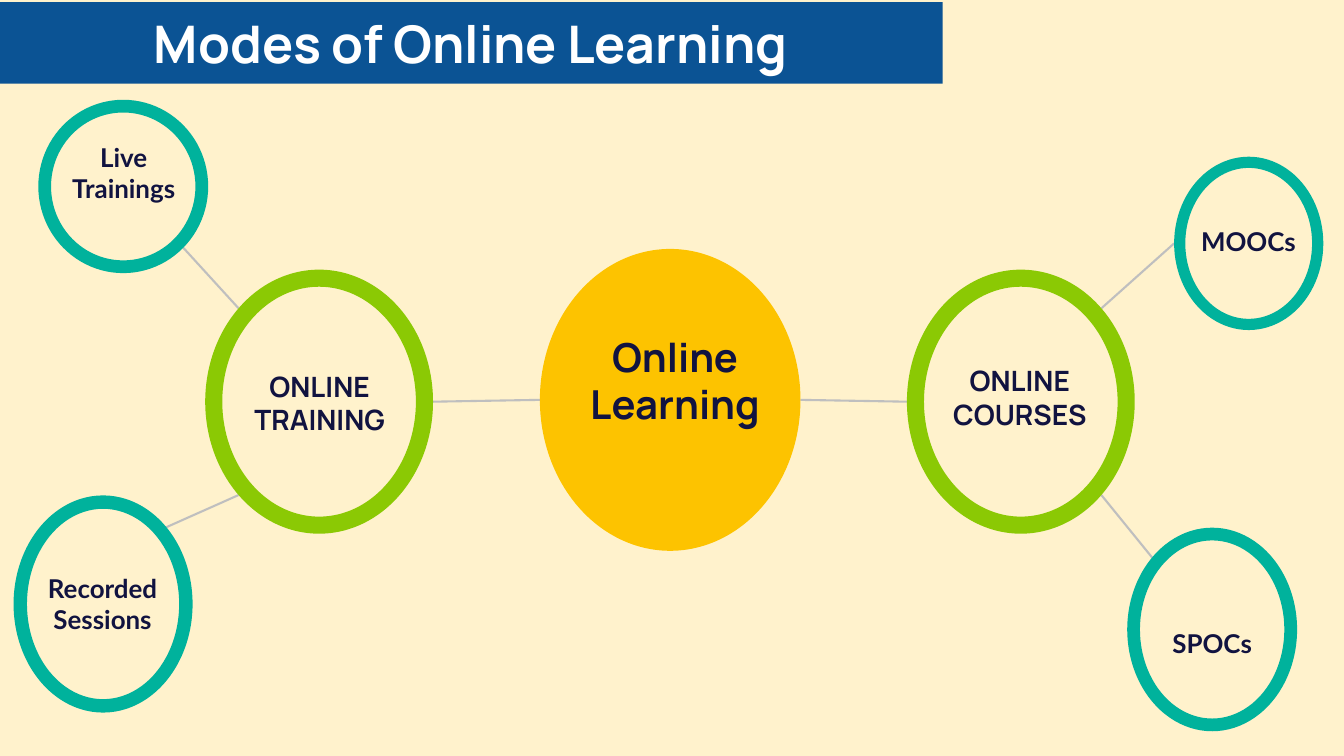
from math import cos, radians, sin

from lxml import etree
from pptx import Presentation
from pptx.dml.color import RGBColor
from pptx.enum.shapes import MSO_CONNECTOR, MSO_SHAPE
from pptx.enum.text import MSO_ANCHOR, MSO_AUTO_SIZE, PP_ALIGN
from pptx.oxml.ns import qn
from pptx.util import Inches, Pt

STRAIGHT = MSO_CONNECTOR.STRAIGHT
OVAL, RING = MSO_SHAPE.OVAL, MSO_SHAPE.DONUT
MIDDLE, CENTER = MSO_ANCHOR.MIDDLE, PP_ALIGN.CENTER
NO_AUTOFIT = MSO_AUTO_SIZE.NONE
TITLE_ONLY = 5

WIDTH, HEIGHT = Inches(26.66), Inches(15)
COLUMNS = ROWS = 100  # all places and sizes below are columns and rows

CREAM, NAVY, WHITE, BLUE = "FFF2CC", "111340", "FFFFFF", "0B5394"
YELLOW, GREEN, TEAL, GREY = "FDC300", "8BC904", "00B29C", "BFBFBF"

HUB = {"kind": OVAL, "color": YELLOW, "font": "Manrope", "size": 57}
BRANCH = {"kind": RING, "color": GREEN, "font": "Manrope", "size": 40}
LEAF = {"kind": RING, "color": TEAL, "font": "Lato", "size": 37}

# Label: (style, circle box, label box), boxes as left, top, width, height
CIRCLES = {
    "Online Learning": (HUB, (40.17, 32.93, 19.39, 39.93), (41.75, 43.53, 16.95, 13.47)),
    "ONLINE TRAINING": (BRANCH, (15.27, 35.67, 16.95, 34.93), (18.23, 48.47, 11.1, 9.67)),
    "Recorded Sessions": (LEAF, (1.01, 65.53, 13.32, 28.73), (1.31, 75.33, 12.64, 9)),
    "Live Trainings": (LEAF, (2.85, 13.2, 12.64, 22.93), (4.46, 18.33, 9.49, 9)),
    "ONLINE COURSES": (BRANCH, (67.48, 35.67, 16.95, 34.93), (70.33, 47.73, 11.1, 9.67)),
    "MOOCs": (LEAF, (87.36, 20.73, 11.1, 22.93), (88.97, 29.47, 7.84, 4.8)),
    "SPOCs": (LEAF, (83.87, 69.8, 12.64, 26.93), (86.27, 82.73, 7.84, 4.8)),
}

# Each end is a circle and the clockwise angle of the point on its rim
LINKS = [
    (("Live Trainings", 45), ("ONLINE TRAINING", 225)),
    (("Recorded Sessions", 315), ("ONLINE TRAINING", 135)),
    (("ONLINE COURSES", 45), ("SPOCs", 225)),
    (("MOOCs", 180), ("ONLINE COURSES", 315)),
    (("Online Learning", 0), ("ONLINE COURSES", 180)),
    (("ONLINE TRAINING", 0), ("Online Learning", 180)),
]


def rgb(color):
    return RGBColor.from_string(color)


def grid(x, y):
    return round(x * WIDTH / COLUMNS), round(y * HEIGHT / ROWS)


def rim_point(label, angle):
    left, top, width, height = CIRCLES[label][1]
    turn = radians(angle)
    return left + width / 2 * (1 + cos(turn)), top + height / 2 * (1 + sin(turn))


class MindMap:
    def __init__(self, slide):
        self.slide = slide
        background = slide.background.fill
        background.solid()
        background.fore_color.rgb = rgb(CREAM)

    def paint(self, shape, color):
        shape.fill.solid()
        shape.fill.fore_color.rgb = rgb(color)
        shape.line.fill.background()

    def set_text(self, shape, text, font, size, color, margins):
        frame = shape.text_frame
        frame.text = text
        sides = ("left", "top", "right", "bottom")
        layout = {"word_wrap": True, "auto_size": NO_AUTOFIT, "vertical_anchor": MIDDLE}
        layout |= {f"margin_{side}": Inches(m) for side, m in zip(sides, margins)}
        for name, value in layout.items():
            setattr(frame, name, value)
        paragraph = frame.paragraphs[0]
        paragraph.alignment = CENTER
        for name, value in {"name": font, "size": Pt(size), "bold": True}.items():
            setattr(paragraph.runs[0].font, name, value)
        paragraph.runs[0].font.color.rgb = rgb(color)

    def banner(self, text, box):
        title = self.slide.shapes.title
        title.left, title.top = grid(*box[:2])
        title.width, title.height = grid(*box[2:])
        # Rounded outline for the title placeholder
        properties = title.element.spPr
        outline = etree.SubElement(properties, qn("a:prstGeom"), prst="roundRect")
        etree.SubElement(outline, qn("a:avLst"))
        self.paint(title, BLUE)
        self.set_text(title, text, "Manrope", 74, WHITE, (0.27,) * 4)

    def link(self, start, end):
        line = self.slide.shapes.add_connector(
            STRAIGHT, *grid(*rim_point(*start)), *grid(*rim_point(*end)))
        line.line.color.rgb = rgb(GREY)
        line.line.width = Pt(3)
        etree.SubElement(line.element.spPr, qn("a:effectLst"))

    def circle(self, style, box):
        circle = self.slide.shapes.add_shape(style["kind"], *grid(*box[:2]), *grid(*box[2:]))
        circle.shadow.inherit = False
        if style["kind"] == RING:
            circle.adjustments[0] = 0.075
        self.paint(circle, style["color"])

    def label(self, text, style, box):
        label = self.slide.shapes.add_textbox(*grid(*box[:2]), *grid(*box[2:]))
        self.set_text(label, text, style["font"], style["size"], NAVY, (0.1, 0.05, 0.1, 0.05))


def main():
    deck = Presentation()
    deck.slide_width, deck.slide_height = WIDTH, HEIGHT
    mind_map = MindMap(deck.slides.add_slide(deck.slide_layouts[TITLE_ONLY]))

    # Title
    mind_map.banner("Modes of Online Learning", (-0.08, 0.27, 70.22, 10.8))

    # Links lie behind the circles, labels in front
    for start, end in LINKS:
        mind_map.link(start, end)
    for style, circle_box, _ in CIRCLES.values():
        mind_map.circle(style, circle_box)
    for text, (style, _, label_box) in CIRCLES.items():
        mind_map.label(text, style, label_box)

    deck.save("out.pptx")


if __name__ == "__main__":
    main()
